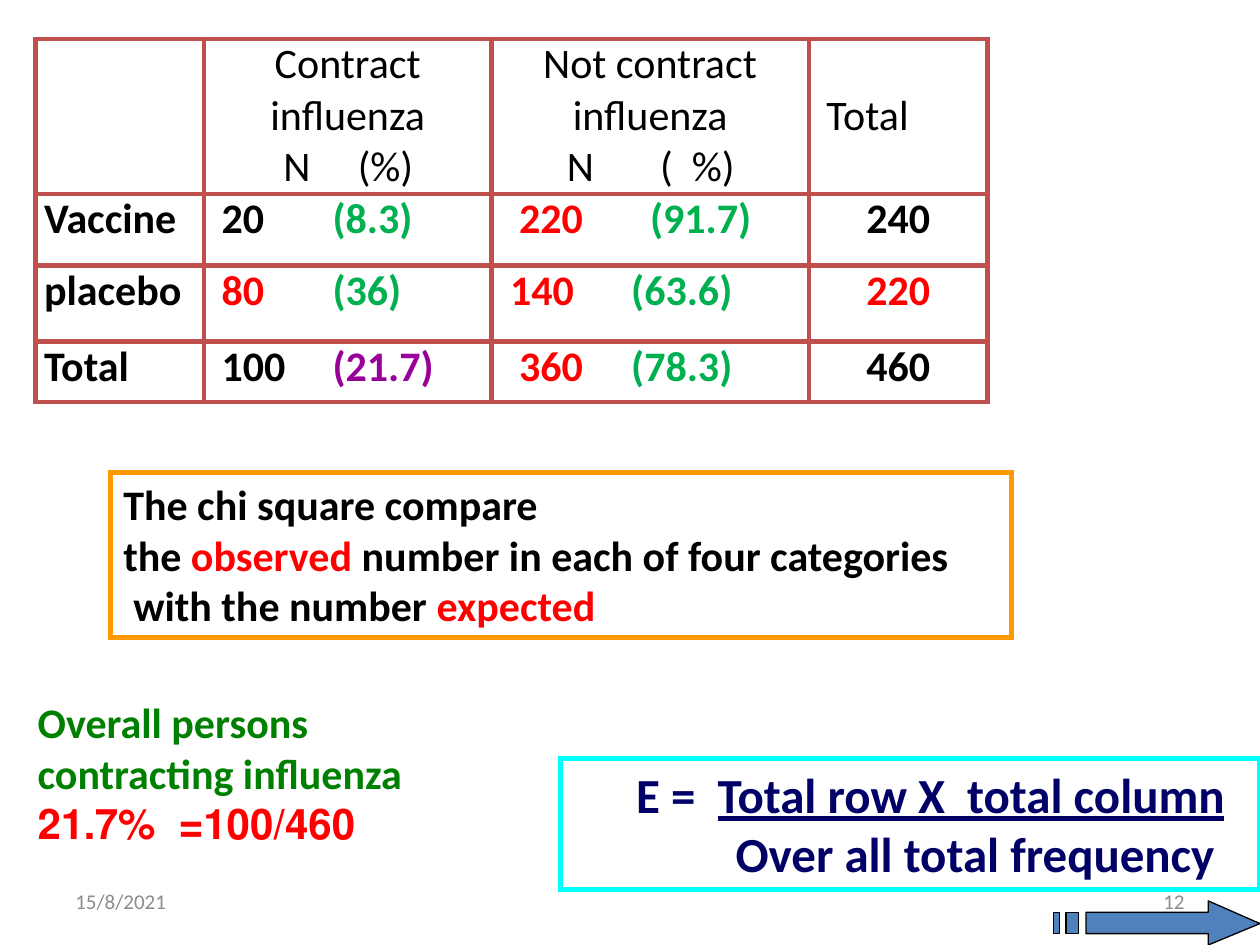
from dataclasses import dataclass

import lxml.etree
import pptx
import pptx.dml.color
import pptx.enum.shapes
import pptx.enum.text
import pptx.oxml.ns
import pptx.util

Inches = pptx.util.Inches
Align = pptx.enum.text.PP_ALIGN
Anchor = pptx.enum.text.MSO_ANCHOR
qn = pptx.oxml.ns.qn

BLACK, RED, GREEN, PURPLE = "000000", "FF0000", "00B050", "990099"
FOREST, NAVY, GREY = "008000", "000066", "8C8C8C"
BORDER = "C0504D"


@dataclass
class Span:
    text: str
    color: str = BLACK
    bold: bool = True
    underline: bool = False
    size: float = 24


@dataclass
class Line:
    spans: list[Span]
    align: Align = Align.LEFT
    tabs: tuple[float, ...] = ()
    indent: float = 0
    rtl: bool = False


@dataclass
class Panel:
    area: tuple[float, float, float, float]
    lines: list[Line]
    outline: str = ""
    anchor: Anchor = Anchor.TOP


def rgb(color: str) -> pptx.dml.color.RGBColor:
    return pptx.dml.color.RGBColor.from_string(color)


def write_lines(frame, lines: list[Line]) -> None:
    for index, line in enumerate(lines):
        para = frame.paragraphs[0] if index == 0 else frame.add_paragraph()
        para.alignment = line.align
        properties = para._p.get_or_add_pPr()
        if line.indent:
            properties.set("marL", str(Inches(line.indent)))
            properties.set("indent", "0")
        if line.rtl:
            properties.set("rtl", "1")
        if line.tabs:
            stops = lxml.etree.SubElement(properties, qn("a:tabLst"))
            for tab in line.tabs:
                lxml.etree.SubElement(stops, qn("a:tab"), pos=str(Inches(tab)), algn="l")
        for span in line.spans:
            run = para.add_run()
            run.text = span.text
            run.font.name = "Calibri"
            run.font.size = pptx.util.Pt(span.size)
            run.font.bold = span.bold
            run.font.underline = span.underline
            run.font.color.rgb = rgb(span.color)


def add_panel(slide, panel: Panel) -> None:
    area = [Inches(length) for length in panel.area]
    if panel.outline:
        box = slide.shapes.add_shape(pptx.enum.shapes.MSO_SHAPE.RECTANGLE, *area)
        box.shadow.inherit = False
        box.fill.background()
        box.line.color.rgb = rgb(panel.outline)
        box.line.width = pptx.util.Pt(3)
        lxml.etree.SubElement(box.line._get_or_add_ln(), qn("a:miter"), lim="800000")
    else:
        box = slide.shapes.add_textbox(*area)
    box.text_frame.word_wrap = True
    box.text_frame.vertical_anchor = panel.anchor
    write_lines(box.text_frame, panel.lines)


def add_borders(cell) -> None:
    properties = cell._tc.get_or_add_tcPr()
    for index, side in enumerate(("a:lnL", "a:lnR", "a:lnT", "a:lnB")):
        edge = lxml.etree.Element(qn(side), w=str(pptx.util.Pt(3)))
        fill = lxml.etree.SubElement(edge, qn("a:solidFill"))
        lxml.etree.SubElement(fill, qn("a:srgbClr"), val=BORDER)
        properties.insert(index, edge)


def heading(text: str, unit: str, tabs: tuple[float, float]) -> list[Line]:
    return [
        Line([Span(text, bold=False)], Align.CENTER),
        Line([Span(f"\tN\t{unit}", bold=False)], tabs=tabs),
    ]


def label(text: str) -> list[Line]:
    return [Line([Span(text)])]


def count(number: str, color: str, share: str, share_color: str, tabs: tuple[float, float]) -> list[Line]:
    return [Line([Span(f"\t{number}\t", color), Span(share, share_color)], tabs=tabs)]


def total(number: str, color: str = BLACK) -> list[Line]:
    return [Line([Span(number, color)], Align.CENTER)]


def add_influenza_table(slide) -> None:
    widths, heights = (1.34, 2.28, 2.52, 1.42), (1.23, 0.57, 0.6, 0.48)
    left_tabs = (0.07, 0.95)
    rows = [
        [
            [],
            heading("Contract influenza", "(%)", (0.56, 1.15)),
            heading("Not contract influenza", "(  %)", (0.53, 1.27)),
            [Line([Span("\tTotal", bold=False)], tabs=(0.07,))],
        ],
        [
            label("Vaccine"),
            count("20", BLACK, "(8.3)", GREEN, left_tabs),
            count("220", RED, "(91.7)", GREEN, (0.15, 1.19)),
            total("240"),
        ],
        [
            label("placebo"),
            count("80", RED, "(36)", GREEN, left_tabs),
            count("140", RED, "(63.6)", GREEN, (0.08, 1.04)),
            total("220", RED),
        ],
        [
            label("Total"),
            count("100", BLACK, "(21.7)", PURPLE, left_tabs),
            count("360", RED, "(78.3)", GREEN, (0.15, 1.04)),
            total("460"),
        ],
    ]
    table = slide.shapes.add_table(
        len(heights), len(widths), Inches(0.28), Inches(0.31), Inches(sum(widths)), Inches(sum(heights))
    ).table
    table.first_row = table.horz_banding = False
    for column, width in zip(table.columns, widths):
        column.width = Inches(width)
    for row, height, contents in zip(table.rows, heights, rows):
        row.height = Inches(height)
        for cell, lines in zip(row.cells, contents):
            cell.margin_left = cell.margin_right = Inches(0.07)
            cell.margin_top = cell.margin_bottom = 0
            cell.fill.solid()
            cell.fill.fore_color.rgb = rgb("FFFFFF")
            add_borders(cell)
            write_lines(cell.text_frame, lines)
    table.cell(0, 3).vertical_anchor = Anchor.MIDDLE


def add_striped_arrow(slide) -> None:
    top, bottom = 724, 741
    head = [(959, 715), (959, top), (862, top), (862, bottom), (959, bottom), (959, 750), (1000, 733)]
    stripes = [
        [(left, top), (left, bottom), (right, bottom), (right, top)]
        for left, right in ((846, 856), (836, 841))
    ]
    builder = slide.shapes.build_freeform(*head[0], scale=Inches(0.01))
    builder.add_line_segments(head[1:], close=True)
    for stripe in stripes:
        builder.move_to(*stripe[0])
        builder.add_line_segments(stripe[1:], close=True)
    arrow = builder.convert_to_shape()
    arrow.shadow.inherit = False
    arrow.fill.solid()
    arrow.fill.fore_color.rgb = rgb("4F81BD")
    arrow.line.color.rgb = rgb(BLACK)
    arrow.line.width = pptx.util.Pt(0.75)


def main() -> None:
    deck = pptx.Presentation()
    deck.slide_width, deck.slide_height = Inches(10), Inches(7.5)
    slide = deck.slides.add_slide(deck.slide_layouts[6])
    add_influenza_table(slide)
    add_panel(slide, Panel((0.88, 3.75, 7.15, 1.31), [
        Line([Span("The chi square compare")]),
        Line([Span("the "), Span("observed ", RED), Span("number in each of four categories")]),
        Line([Span("with the number "), Span("expected", RED)], indent=0.08),
    ], "FF9900"))
    add_panel(slide, Panel((0.2, 5.48, 3.98, 1.31), [
        Line([Span("Overall persons", FOREST)]),
        Line([Span("contracting influenza", FOREST)]),
        Line([Span("100/460=  21.7%", RED)], rtl=True),
    ]))
    add_striped_arrow(slide)
    add_panel(slide, Panel((4.45, 6.02, 5.55, 1.04), [
        Line([Span("E =  ", NAVY, size=28), Span("Total row X  total column", NAVY, underline=True, size=28)], indent=0.5),
        Line([Span("Over all total frequency", NAVY, size=28)], indent=1.29),
    ], "00FFFF"))
    for left, text, align in ((0.5, "15/8/2021", Align.LEFT), (7.17, "12", Align.RIGHT)):
        footer = Line([Span(text, GREY, bold=False, size=12)], align)
        add_panel(slide, Panel((left, 6.95, 2.33, 0.4), [footer], anchor=Anchor.MIDDLE))
    deck.save("out.pptx")


if __name__ == "__main__":
    main()
